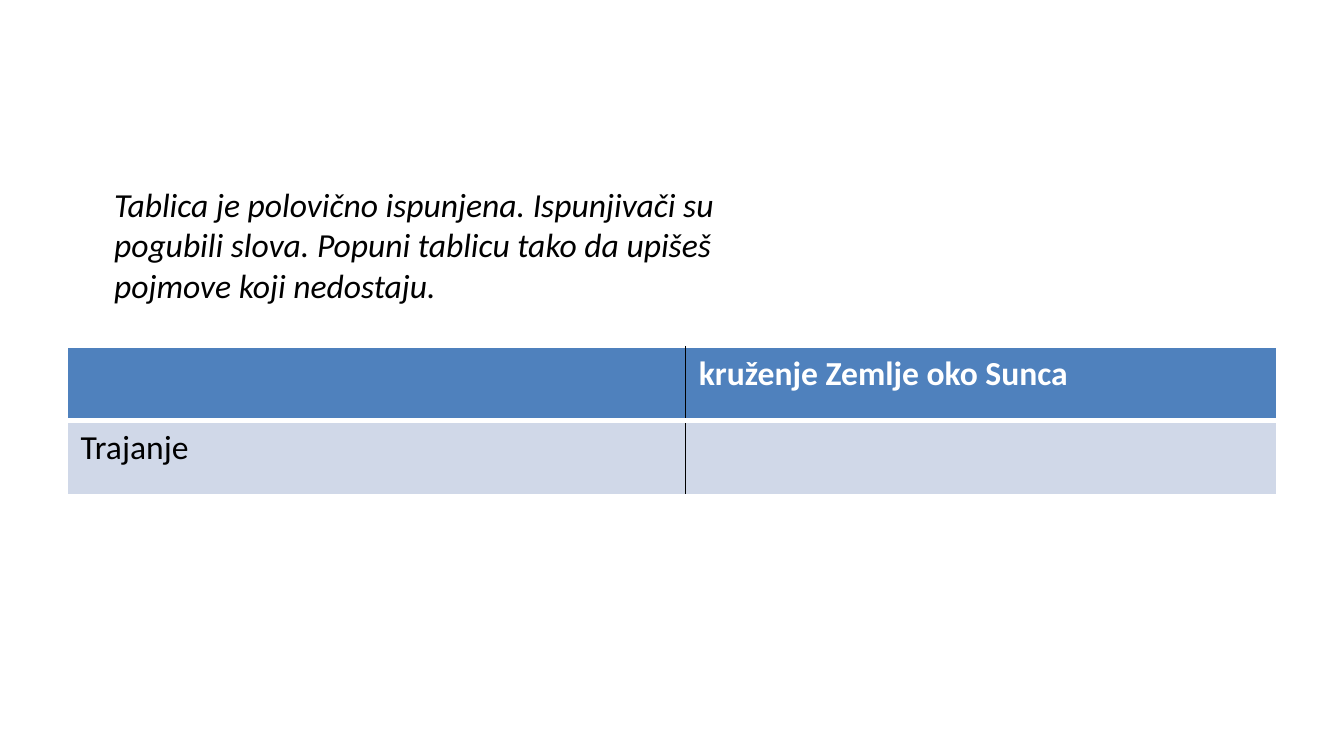
from lxml import etree
from pptx import Presentation
from pptx.dml.color import RGBColor
from pptx.enum.text import MSO_AUTO_SIZE
from pptx.oxml.ns import qn
from pptx.util import Inches, Pt

FIT_SHAPE = MSO_AUTO_SIZE.SHAPE_TO_FIT_TEXT
SLIDE_WIDTH = 10
SLIDE_HEIGHT = SLIDE_WIDTH * 9 / 16
COLORS = {
    "header": "4F81BD",
    "body": "D0D8E8",
    "white": "FFFFFF",
    "black": "000000",
}


class SlideBuilder:
    font_name = "Calibri"
    font_size = 18

    def __init__(self, slide):
        self.slide = slide

    def add_run(self, paragraph, text, color="black", bold=False, italic=False):
        run = paragraph.add_run()
        run.text = text
        font = run.font
        font.name = self.font_name
        font.size = Pt(self.font_size)
        font.bold = bold
        font.italic = italic
        font.color.rgb = RGBColor.from_string(COLORS[color])

    def add_text(self, text, left, top, width, height, **style):
        box = self.slide.shapes.add_textbox(
            Inches(left), Inches(top), Inches(width), Inches(height))
        frame = box.text_frame
        frame.word_wrap = True
        frame.auto_size = FIT_SHAPE
        self.add_run(frame.paragraphs[0], text, **style)

    def set_borders(self, cell, borders):
        """Draw (side, color, points) borders, given in the order L, R, T, B."""
        properties = cell._tc.get_or_add_tcPr()
        for index, (side, color, points) in enumerate(borders):
            line = etree.Element(qn(f"a:ln{side}"), w=str(Pt(points)))
            fill = etree.SubElement(line, qn("a:solidFill"))
            etree.SubElement(fill, qn("a:srgbClr"), val=COLORS[color])
            properties.insert(index, line)

    def add_table(self, rows, left, top, column_widths, row_height):
        """Add a table with a header row and a black line between columns."""
        shape = self.slide.shapes.add_table(
            len(rows), len(column_widths), Inches(left), Inches(top),
            Inches(sum(column_widths)), Inches(row_height * len(rows)))
        table = shape.table
        for column, width in zip(table.columns, column_widths):
            column.width = Inches(width)
        last_column = len(column_widths) - 1
        for row_index, texts in enumerate(rows):
            is_header = row_index == 0
            for column_index, text in enumerate(texts):
                cell = table.cell(row_index, column_index)
                cell.fill.solid()
                cell.fill.fore_color.rgb = RGBColor.from_string(
                    COLORS["header" if is_header else "body"])
                self.set_borders(cell, [
                    ("L", "black" if column_index > 0 else "white", 1),
                    ("R", "black" if column_index < last_column else "white", 1),
                    ("T", "white", 3 if row_index == 1 else 1),
                    ("B", "white", 3 if is_header else 1),
                ])
                if text:
                    self.add_run(cell.text_frame.paragraphs[0], text,
                                 color="white" if is_header else "black",
                                 bold=is_header)


def main():
    presentation = Presentation()
    presentation.slide_width = Inches(SLIDE_WIDTH)
    presentation.slide_height = Inches(SLIDE_HEIGHT)
    slide = presentation.slides.add_slide(presentation.slide_layouts[6])
    builder = SlideBuilder(slide)
    builder.add_table(
        [["", "kruženje Zemlje oko Sunca"], ["Trajanje", ""]],
        left=0.5, top=2.58, column_widths=[4.6, 4.4], row_height=0.55)
    builder.add_text(
        "Tablica je polovično ispunjena. Ispunjivači su pogubili slova. "
        "Popuni tablicu tako da upišeš pojmove koji nedostaju.",
        0.75, 1.32, 5.51, 1.01, italic=True)
    presentation.save("out.pptx")


if __name__ == "__main__":
    main()
